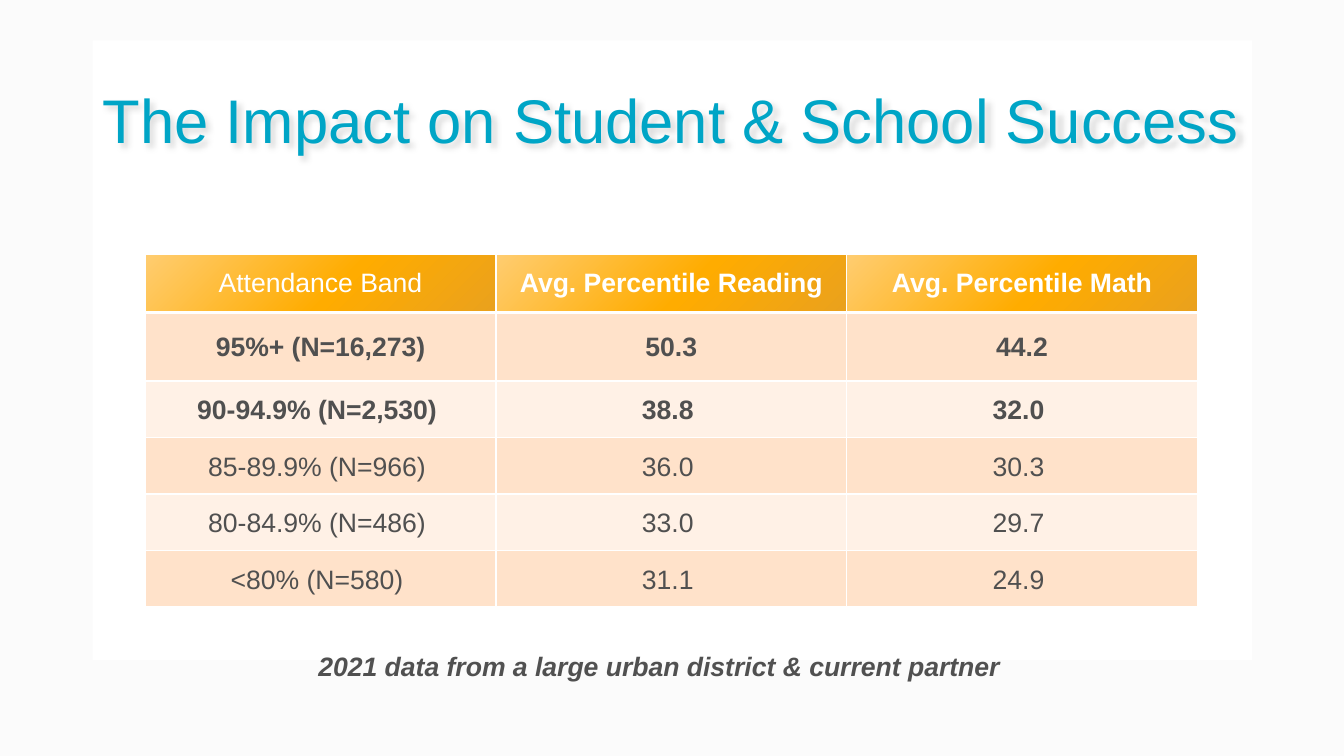
from typing import NamedTuple

from lxml import etree
from pptx import Presentation
from pptx.dml.color import RGBColor
from pptx.enum.shapes import MSO_SHAPE
from pptx.enum.text import MSO_ANCHOR, PP_ALIGN
from pptx.oxml import parse_xml
from pptx.oxml.ns import nsdecls, qn
from pptx.util import Inches, Pt

RECT = MSO_SHAPE.RECTANGLE
TOP, MID = MSO_ANCHOR.TOP, MSO_ANCHOR.MIDDLE
LEFT, MIDDLE = PP_ALIGN.LEFT, PP_ALIGN.CENTER

WIDE, HIGH = Inches(13.333), Inches(7.5)
FONT = "Arial"
HUES = {
    "page": "FBFBFB", "white": "FFFFFF", "title": "00A5C6", "text": "505050",
    "odd": "FFE2CA", "even": "FFF1E6",
}
BLEND = ((0, "FFCD71"), (55, "FFAC00"), (100, "EAA11D"))


class Box(NamedTuple):
    """Percent shares of the slide's width and height."""
    x: float
    y: float
    w: float
    h: float

    def frame(self) -> tuple[int, int, int, int]:
        return across(self.x), down(self.y), across(self.w), down(self.h)


class Band(NamedTuple):
    cells: tuple[str, str, str]
    high: float = 7.47
    bold: bool = False
    pad: tuple[float, float, float] = (0.05, 0.12, 0)  # left, right, top


HEAD = ("Attendance Band", "Avg. Percentile Reading", "Avg. Percentile Math")
HEAD_HIGH = 7.73
BANDS = (
    Band(("95%+ (N=16,273)", "50.3", "44.2"), 9.07, True, (0.1, 0.1, 0.05)),
    Band(("90-94.9% (N=2,530)", "38.8", "32.0"), bold=True),
    Band(("85-89.9% (N=966)", "36.0", "30.3")),
    Band(("80-84.9% (N=486)", "33.0", "29.7")),
    Band(("<80% (N=580)", "31.1", "24.9")),
)
COL = 26.1
PANEL = Box(6.9, 5.33, 86.25, 82)
TITLE = Box(6.9, 11.33, 89.55, 18.67)
GRID = Box(10.8, 33.6, COL * len(HEAD), HEAD_HIGH + sum(b.high for b in BANDS))
NOTE = Box(22.95, 85.33, 56.7, 5.6)


def across(share: float) -> int:
    return round(WIDE * share / 100)


def down(share: float) -> int:
    return round(HIGH * share / 100)


def hue(name: str) -> RGBColor:
    return RGBColor.from_string(HUES[name])


def write(frame, text: str, *, size: float = 19, color: str = "text",
          bold: bool = False, slant: bool = False, align=LEFT,
          lead: float = 1.0) -> None:
    para = frame.paragraphs[0]
    para.alignment, para.line_spacing = align, lead
    run = para.add_run()
    run.text = text
    font = run.font
    font.name, font.size, font.bold, font.italic = FONT, Pt(size), bold, slant
    font.color.rgb = hue(color)


def label(slide, box: Box, text: str, **form):
    shape = slide.shapes.add_textbox(*box.frame())
    shape.text_frame.word_wrap = True
    write(shape.text_frame, text, **form)
    return shape


def shade(shape) -> None:
    """Cast a soft shadow from the text of an unfilled box."""
    shape._element.spPr.append(parse_xml(
        f'<a:effectLst {nsdecls("a")}><a:outerShdw blurRad="50800" dist="38100" '
        'dir="2700000" algn="tl" rotWithShape="0"><a:srgbClr val="000000">'
        '<a:alpha val="15000"/></a:srgbClr></a:outerShdw></a:effectLst>'))


def edge(cell, base: float) -> None:
    props = cell._tc.get_or_add_tcPr()
    for side, width in (("L", 1), ("R", 1), ("T", 1), ("B", base)):
        line = etree.SubElement(props, qn(f"a:ln{side}"), w=str(Pt(width)))
        fill = etree.SubElement(line, qn("a:solidFill"))
        etree.SubElement(fill, qn("a:srgbClr"), val=HUES["white"])


def blend(cell) -> None:
    stops = "".join(f'<a:gs pos="{pos * 1000}"><a:srgbClr val="{tone}"/></a:gs>'
                    for pos, tone in BLEND)
    cell._tc.get_or_add_tcPr().append(parse_xml(
        f'<a:gradFill {nsdecls("a")}><a:gsLst>{stops}</a:gsLst>'
        '<a:lin ang="2700000" scaled="0"/></a:gradFill>'))


def chart_bands(slide) -> None:
    table = slide.shapes.add_table(
        len(BANDS) + 1, len(HEAD), *GRID.frame()).table
    for col in table.columns:
        col.width = across(COL)

    # Header row
    table.rows[0].height = down(HEAD_HIGH)
    for i, text in enumerate(HEAD):
        cell = table.cell(0, i)
        edge(cell, 3)
        blend(cell)
        cell.vertical_anchor = MID
        write(cell.text_frame, text, color="white", bold=i > 0, align=MIDDLE)

    # Attendance rows
    for r, band in enumerate(BANDS, 1):
        table.rows[r].height = down(band.high)
        for i, text in enumerate(band.cells):
            cell = table.cell(r, i)
            edge(cell, 1)
            cell.fill.solid()
            cell.fill.fore_color.rgb = hue("odd" if r % 2 else "even")
            left, right, top = band.pad
            cell.margin_left, cell.margin_right = Inches(left), Inches(right)
            cell.margin_top = cell.margin_bottom = Inches(top)
            cell.vertical_anchor = TOP
            write(cell.text_frame, text, bold=band.bold, align=MIDDLE, lead=1.5)
        # The header's thick rule is shared with the first row
        if r == 1:
            for cell in table.rows[r].cells:
                cell._tc.tcPr.find(qn("a:lnT")).set("w", str(Pt(3)))


def main() -> None:
    deck = Presentation()
    deck.slide_width, deck.slide_height = WIDE, HIGH
    slide = deck.slides.add_slide(deck.slide_layouts[6])
    slide.background.fill.solid()
    slide.background.fill.fore_color.rgb = hue("page")

    # White panel
    panel = slide.shapes.add_shape(RECT, *PANEL.frame())
    panel.shadow.inherit = False
    panel.fill.solid()
    panel.fill.fore_color.rgb = hue("white")
    panel.line.fill.background()

    # Title, table and source note
    shade(label(slide, TITLE, "The Impact on Student & School Success",
                size=44, color="title", lead=0.9))
    chart_bands(slide)
    label(slide, NOTE, "2021 data from a large urban district & current partner",
          bold=True, slant=True)
    deck.save("out.pptx")


if __name__ == "__main__":
    main()
